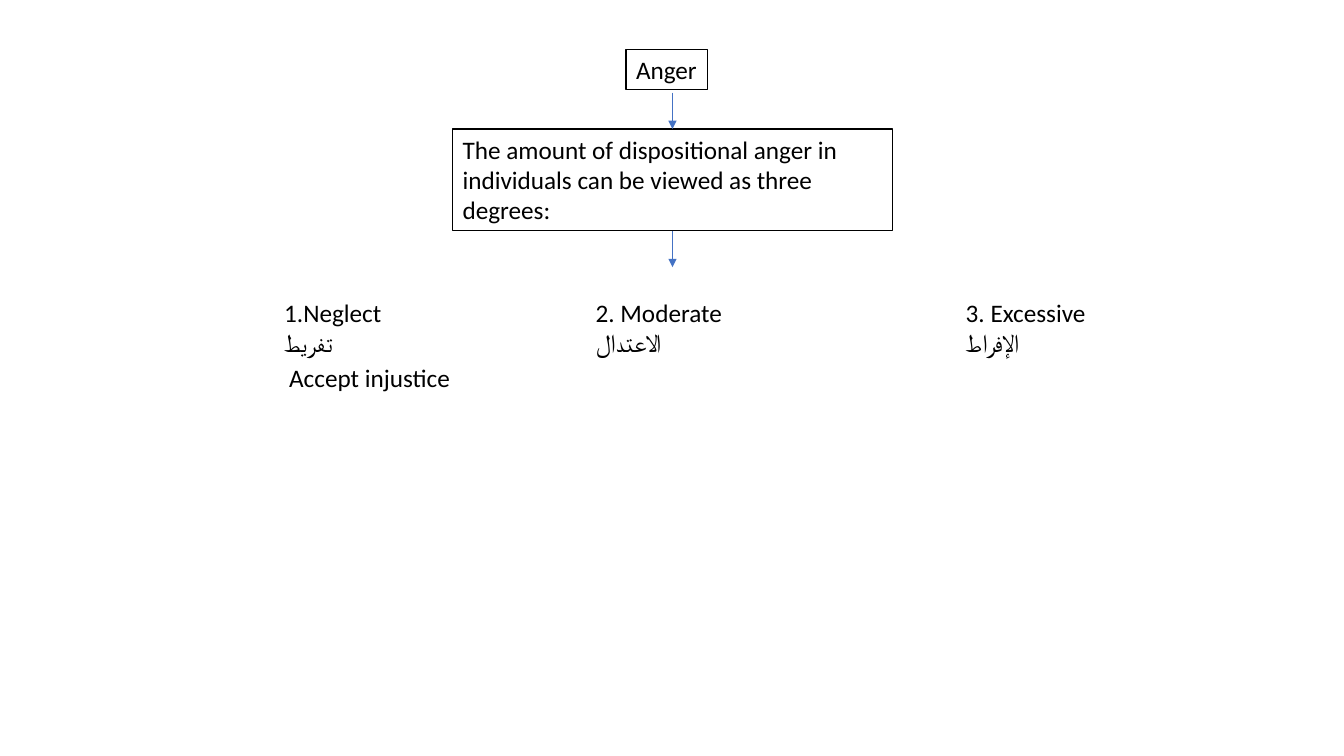
from pptx import Presentation
from pptx.dml.color import RGBColor
from pptx.enum.shapes import MSO_CONNECTOR, MSO_SHAPE
from pptx.enum.text import MSO_ANCHOR, PP_ALIGN
from pptx.oxml.ns import qn
from pptx.util import Inches, Pt
from lxml import etree

RECTANGLE = MSO_SHAPE.RECTANGLE
STRAIGHT = MSO_CONNECTOR.STRAIGHT
LEFT = PP_ALIGN.LEFT
TOP = MSO_ANCHOR.TOP
TOP_SIDE, BOTTOM_SIDE = 0, 2

COLORS = {"text": "000000", "fill": "FFFFFF", "border": "000000", "arrow": "4472C4"}
FONT = {"name": "Calibri", "size": Pt(18)}

TOPIC = ("Anger", 6.21, 0.49, 0.81, 0.4)
STATEMENT = (
    "The amount of dispositional anger in individuals can be viewed as three degrees:",
    4.49, 1.28, 4.36, 1.01,
)
DEGREES = [
    ("1.Neglect", "تفريط", 2.72, 1.75),
    ("2. Moderate", "الاعتدال", 5.81, 2.33),
    ("3. Excessive", "الإفراط", 9.48, 2.26),
]
DEGREE_TOP, DEGREE_HEIGHT = 2.9, 0.65
EXAMPLE = ("Accept injustice", 2.77, 3.55, 1.93, 0.4)
ARROW_LENGTH = 0.36


def color(name):
    return RGBColor.from_string(COLORS[name])


def write(box, text, wrap=True):
    frame = box.text_frame
    frame.word_wrap = wrap
    frame.vertical_anchor = TOP
    para = frame.paragraphs[0]
    para.alignment = LEFT
    para.text = text
    for span in para.runs:
        for key, value in FONT.items():
            setattr(span.font, key, value)
        span.font.color.rgb = color("text")


def add_label(page, text, *place):
    box = page.shapes.add_textbox(*map(Inches, place))
    write(box, text)


def add_node(page, text, *place, wrap=True):
    box = page.shapes.add_shape(RECTANGLE, *map(Inches, place))
    box.shadow.inherit = False
    box.fill.solid()
    box.fill.fore_color.rgb = color("fill")
    box.line.color.rgb = color("border")
    box.line.width = Pt(1)
    write(box, text, wrap)
    return box


def add_arrow(page, x, top):
    arrow = page.shapes.add_connector(
        STRAIGHT, *map(Inches, (x, top, x, top + ARROW_LENGTH))
    )
    arrow.line.color.rgb = color("arrow")
    arrow.line.width = Pt(0.5)
    etree.SubElement(arrow.line._get_or_add_ln(), qn("a:tailEnd"), type="triangle")
    etree.SubElement(arrow._element.spPr, qn("a:effectLst"))
    return arrow


def main():
    deck = Presentation()
    deck.slide_width, deck.slide_height = Inches(13.33), Inches(7.5)
    page = deck.slides.add_slide(deck.slide_layouts[6])

    statement = add_node(page, *STATEMENT)
    add_node(page, *TOPIC, wrap=False)

    _, left, top, width, height = STATEMENT
    middle = left + width / 2
    add_arrow(page, middle, top - ARROW_LENGTH).end_connect(statement, TOP_SIDE)
    add_arrow(page, middle, top + height).begin_connect(statement, BOTTOM_SIDE)

    for english, arabic, degree_left, degree_width in DEGREES:
        add_label(page, f"{english}\v{arabic}",
                  degree_left, DEGREE_TOP, degree_width, DEGREE_HEIGHT)
    add_label(page, *EXAMPLE)

    deck.save("out.pptx")


if __name__ == "__main__":
    main()
